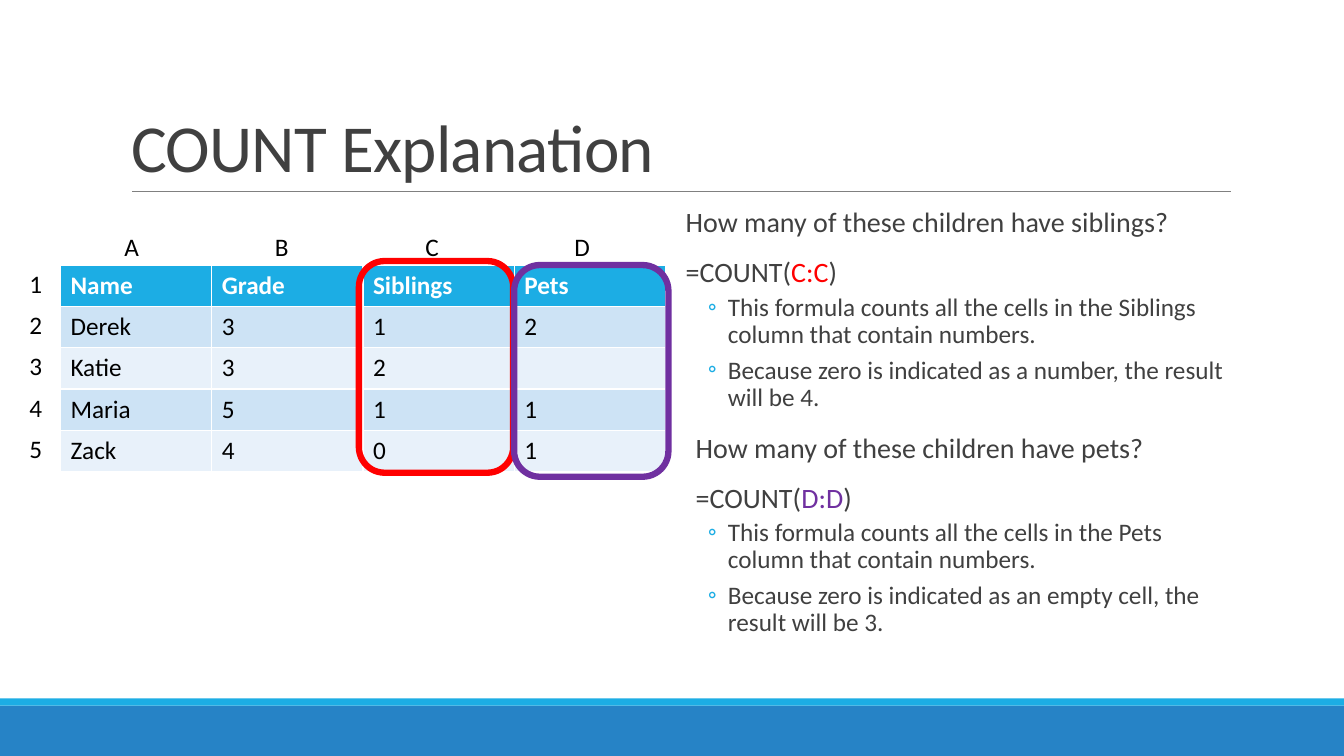
from lxml.etree import SubElement
from pptx import Presentation
from pptx.dml.color import RGBColor
from pptx.enum.shapes import MSO_CONNECTOR, MSO_SHAPE
from pptx.enum.text import MSO_ANCHOR, MSO_AUTO_SIZE, PP_ALIGN
from pptx.oxml.ns import qn
from pptx.util import Inches, Pt

WHITE = RGBColor(0xFF, 0xFF, 0xFF)
BLACK = RGBColor(0x00, 0x00, 0x00)
INK = RGBColor(0x40, 0x40, 0x40)
RULE = RGBColor(0x80, 0x80, 0x80)
CYAN = RGBColor(0x1C, 0xAD, 0xE4)
BLUE = RGBColor(0x26, 0x83, 0xC6)
BAND_DARK = RGBColor(0xCD, 0xE3, 0xF5)
BAND_LIGHT = RGBColor(0xE8, 0xF1, 0xFA)
RED = RGBColor(0xFF, 0x00, 0x00)
PURPLE = RGBColor(0x70, 0x30, 0xA0)

WIDTH, HEIGHT = 13.33, 7.5
COLUMN, ROW = 1.5, 0.41


def add_run(paragraph, text, size, color, bold=False):
    run = paragraph.add_run()
    run.text = text
    run.font.name = "Calibri"
    run.font.size = Pt(size)
    run.font.color.rgb = color
    run.font.bold = bold
    return run


def add_grid(slide, rows, left, top, column, row, fills, align, header=False):
    frame = slide.shapes.add_table(
        len(rows), len(rows[0]), Inches(left), Inches(top),
        Inches(column * len(rows[0])), Inches(row * len(rows)))
    grid = frame.table
    grid.first_row = header
    grid.horz_banding = False
    for grid_column in grid.columns:
        grid_column.width = Inches(column)
    for r, values in enumerate(rows):
        for c, value in enumerate(values):
            cell = grid.cell(r, c)
            if fills:
                cell.fill.solid()
                cell.fill.fore_color.rgb = fills[r]
            else:
                cell.fill.background()
            paragraph = cell.text_frame.paragraphs[0]
            paragraph.alignment = align
            if value:
                heading = header and r == 0
                add_run(paragraph, value, 18, WHITE if heading else BLACK, heading)


presentation = Presentation()
presentation.slide_width = Inches(WIDTH)
presentation.slide_height = Inches(HEIGHT)
slide = presentation.slides.add_slide(presentation.slide_layouts[1])

for top, height, color in [(7, 0.5, BLUE), (6.93, 0.07, CYAN)]:
    band = slide.shapes.add_shape(
        MSO_SHAPE.RECTANGLE, 0, Inches(top), Inches(WIDTH), Inches(height))
    band.shadow.inherit = False
    band.fill.solid()
    band.fill.fore_color.rgb = color
    band.line.fill.background()

title_rule = slide.shapes.add_connector(
    MSO_CONNECTOR.STRAIGHT, Inches(1.31), Inches(1.9), Inches(12.21), Inches(1.9))
title_rule.line.color.rgb = RULE
title_rule.line.width = Pt(0.5)
SubElement(title_rule.element.spPr, qn("a:effectLst"))

title = slide.shapes.title
title.left, title.top, title.width, title.height = map(Inches, (1.2, 0.31, 11, 1.59))
title.text_frame.auto_size = MSO_AUTO_SIZE.NONE
title.text_frame.vertical_anchor = MSO_ANCHOR.BOTTOM
heading = title.text_frame.paragraphs[0]
heading.alignment = PP_ALIGN.LEFT
heading.line_spacing = 0.85
heading_run = add_run(heading, "COUNT Explanation", 48, INK)
heading_run.font._element.set("spc", "-50")

children = [
    ["Name", "Grade", "Siblings", "Pets"],
    ["Derek", "3", "1", "2"],
    ["Katie", "3", "2", ""],
    ["Maria", "5", "1", "1"],
    ["Zack", "4", "0", "1"],
]
row_fills = [CYAN, BAND_DARK, BAND_LIGHT, BAND_DARK, BAND_LIGHT]
add_grid(slide, [list("ABCD")], 0.56, 2.26, 1.49, 0.4, None, PP_ALIGN.CENTER)
add_grid(slide, [[number] for number in "12345"], 0.19, 2.62, 0.68, ROW, None, PP_ALIGN.LEFT)
add_grid(slide, children, 0.6, 2.63, COLUMN, ROW, row_fills, PP_ALIGN.LEFT, header=True)

explanation = slide.placeholders[1]
explanation.left, explanation.top, explanation.width, explanation.height = map(
    Inches, (6.8, 2.02, 5.4, 4.96))
body = explanation.text_frame
body.auto_size = MSO_AUTO_SIZE.NONE
body.vertical_anchor = MSO_ANCHOR.TOP
body.margin_left = body.margin_right = 0
body.margin_top = body.margin_bottom = Inches(0.05)

questions = [
    ("siblings", "C:C", RED, 0, [
        "This formula counts all the cells in the Siblings column that contain numbers.",
        "Because zero is indicated as a number, the result will be 4."]),
    ("pets", "D:D", PURPLE, 0.1, [
        "This formula counts all the cells in the Pets column that contain numbers.",
        "Because zero is indicated as an empty cell, the result will be 3."]),
]
lines = []
for topic, cells, color, indent, reasons in questions:
    lines.append((0, indent, [(f"How many of these children have {topic}?", INK)]))
    lines.append((0, indent, [("=COUNT(", INK), (cells, color), (")", INK)]))
    lines += [(1, 0.42, [(reason, INK)]) for reason in reasons]

for index, (level, indent, parts) in enumerate(lines):
    paragraph = body.add_paragraph() if index else body.paragraphs[0]
    paragraph.level = level
    paragraph.line_spacing = 0.9
    paragraph.space_before = Pt(2 if level else 12)
    paragraph.space_after = Pt(4 if level else 2)
    properties = paragraph._p.get_or_add_pPr()
    properties.set("marL", str(Inches(indent)))
    properties.set("indent", str(Inches(-0.2 if level else 0)))
    if level:
        bullet_color = SubElement(properties, qn("a:buClr"))
        SubElement(bullet_color, qn("a:srgbClr"), val=str(CYAN))
        SubElement(properties, qn("a:buFont"), typeface="Calibri")
        SubElement(properties, qn("a:buChar"), char="◦")
    else:
        SubElement(properties, qn("a:buNone"))
    for text, color in parts:
        add_run(paragraph, text, 18 if level else 20, color)

for left, top, color in [(3.56, 2.59, RED), (5.1, 2.63, PURPLE)]:
    column_ring = slide.shapes.add_shape(
        MSO_SHAPE.ROUNDED_RECTANGLE, Inches(left), Inches(top), Inches(1.53), Inches(2.1))
    column_ring.shadow.inherit = False
    column_ring.fill.background()
    column_ring.line.color.rgb = color
    column_ring.line.width = Pt(4.5)

presentation.save("out.pptx")
